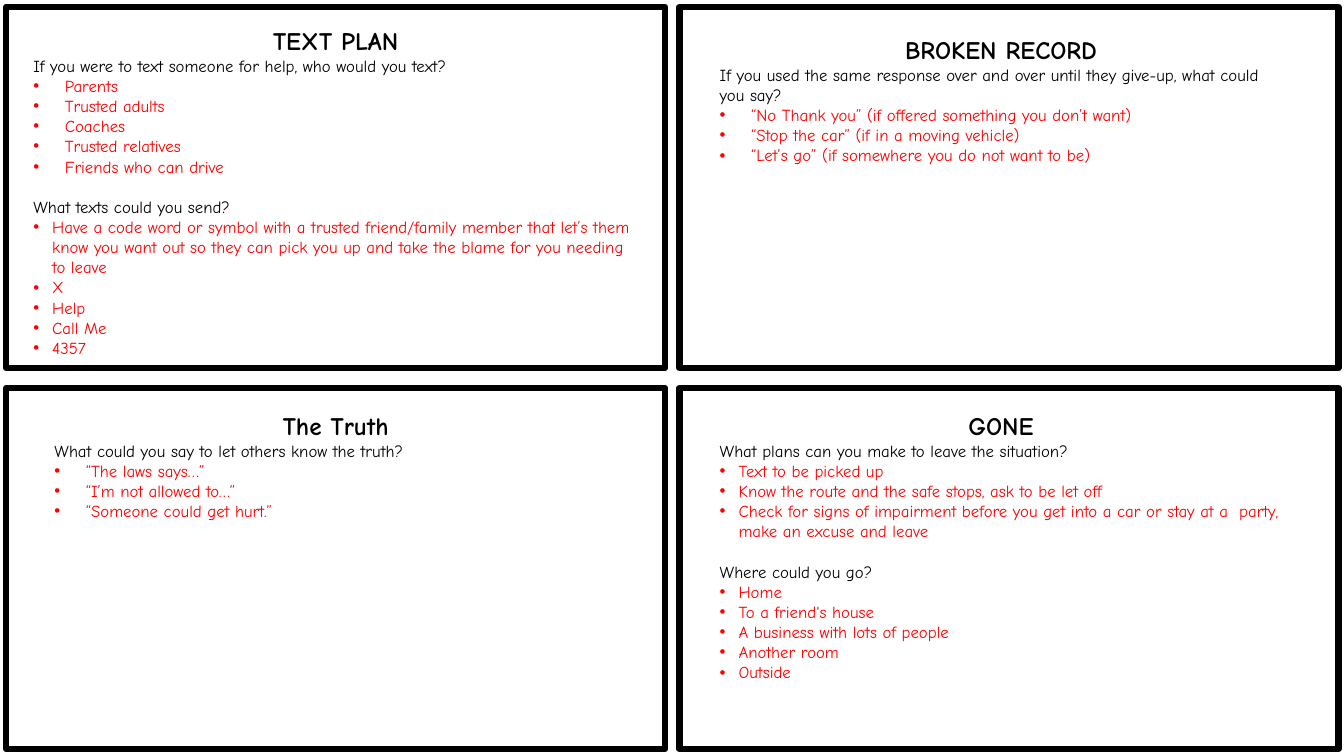
from lxml.etree import SubElement
from pptx import Presentation
from pptx.dml.color import RGBColor
from pptx.enum.shapes import MSO_SHAPE as Preset
from pptx.enum.text import MSO_ANCHOR as Anchor, MSO_AUTO_SIZE as AutoSize, PP_ALIGN as Align
from pptx.oxml.ns import qn
from pptx.util import Pt

WIDE, NARROW = 22.5, 13.5
FRAME_LEFT, FRAME_TOP = 4.4, 5
FRAME_WIDTH, FRAME_HEIGHT = 470.9, 257.8
COLUMN_STEP, ROW_STEP = 480.9, 272.2

PANELS = [
    ("TEXT PLAN", (16.6, 14.4, 446.4, 269.3), [
        ("If you were to text someone for help, who would you text?", WIDE, [
            "Parents",
            "Trusted adults",
            "Coaches",
            "Trusted relatives",
            "Friends who can drive",
        ]),
        ("What texts could you send?", NARROW, [
            "Have a code word or symbol with a trusted friend/family member that let’s them "
            "know you want out so they can pick you up and take the blame for you needing to leave",
            "X",
            "Help",
            "Call Me",
            "4357",
        ]),
    ]),
    ("BROKEN RECORD", (506.9, 20.9, 416.2, 145.4), [
        ("If you used the same response over and over until they give-up, what could you say?", WIDE, [
            "“No Thank you” (if offered something you don’t want)",
            "“Stop the car” (if in a moving vehicle)",
            "“Let’s go” (if somewhere you do not want to be)",
        ]),
    ]),
    ("The Truth", (31.7, 289.4, 416.2, 123.8), [
        ("What could you say to let others know the truth?", WIDE, [
            "“The laws says…”",
            "“I’m not allowed to…”",
            "“Someone could get hurt.”",
        ]),
    ]),
    ("GONE", (506.9, 289.4, 416.2, 239.8), [
        ("What plans can you make to leave the situation?", NARROW, [
            "Text to be picked up",
            "Know the route and the safe stops, ask to be let off",
            "Check for signs of impairment before you get into a car or stay at a  party, "
            "make an excuse and leave",
        ]),
        ("Where could you go?", NARROW, [
            "Home",
            "To a friend's house",
            "A business with lots of people",
            "Another room",
            "Outside",
        ]),
    ]),
]


def color(hex_code):
    return RGBColor.from_string(hex_code)


def write(paragraph, text, *, font="Comic Neue", size=12, ink="000000", bold=False,
          align=Align.LEFT, before=0, indent=0):
    paragraph.alignment = align
    paragraph.line_spacing = 1.0
    paragraph.space_before = Pt(before)
    paragraph.space_after = Pt(0)
    properties = paragraph._p.get_or_add_pPr()
    properties.set("marL", str(Pt(indent)))
    properties.set("indent", str(-Pt(indent)))
    if indent:
        SubElement(properties, qn("a:buFont"), typeface="Arial")
        SubElement(properties, qn("a:buChar"), char="•")
    else:
        SubElement(properties, qn("a:buNone"))
    run = paragraph.add_run()
    run.text = text
    run.font.name = font
    run.font.size = Pt(size)
    run.font.bold = bold
    run.font.color.rgb = color(ink)


class PlanSlide:
    ink, answer_ink, paper = "000000", "FF0000", "FFFFFF"
    heading_size, border, section_gap = 18, 4.5, 14.4

    def __init__(self, slide):
        self.slide = slide

    def frame(self, left, top, width, height):
        shape = self.slide.shapes.add_shape(
            Preset.RECTANGLE, Pt(left), Pt(top), Pt(width), Pt(height))
        shape.shadow.inherit = False
        shape.fill.solid()
        shape.fill.fore_color.rgb = color(self.paper)
        shape.line.color.rgb = color(self.ink)
        shape.line.width = Pt(self.border)

    def panel(self, placeholder, heading, box, sections):
        placeholder.left, placeholder.top, placeholder.width, placeholder.height = map(Pt, box)
        self.slide.shapes.element.append(placeholder.element)
        frame = placeholder.text_frame
        frame.word_wrap = True
        frame.auto_size = AutoSize.SHAPE_TO_FIT_TEXT
        frame.vertical_anchor = Anchor.TOP
        write(frame.paragraphs[0], heading, size=self.heading_size, ink=self.ink,
              bold=True, align=Align.CENTER)
        for number, (question, indent, answers) in enumerate(sections):
            write(frame.add_paragraph(), question, ink=self.ink,
                  before=self.section_gap if number else 0)
            for answer in answers:
                write(frame.add_paragraph(), answer, ink=self.answer_ink, indent=indent)


def main():
    presentation = Presentation()
    presentation.slide_width, presentation.slide_height = Pt(960), Pt(540)
    comparison = presentation.slide_layouts.get_by_name("Comparison")
    slide = presentation.slides.add_slide(comparison)
    title, *bodies = slide.placeholders
    title.element.getparent().remove(title.element)
    plan = PlanSlide(slide)
    for number in range(len(PANELS)):
        row, column = divmod(number, 2)
        plan.frame(FRAME_LEFT + column * COLUMN_STEP, FRAME_TOP + row * ROW_STEP,
                   FRAME_WIDTH, FRAME_HEIGHT)
    for body, panel in zip(bodies, PANELS):
        plan.panel(body, *panel)
    presentation.save("out.pptx")


if __name__ == "__main__":
    main()
